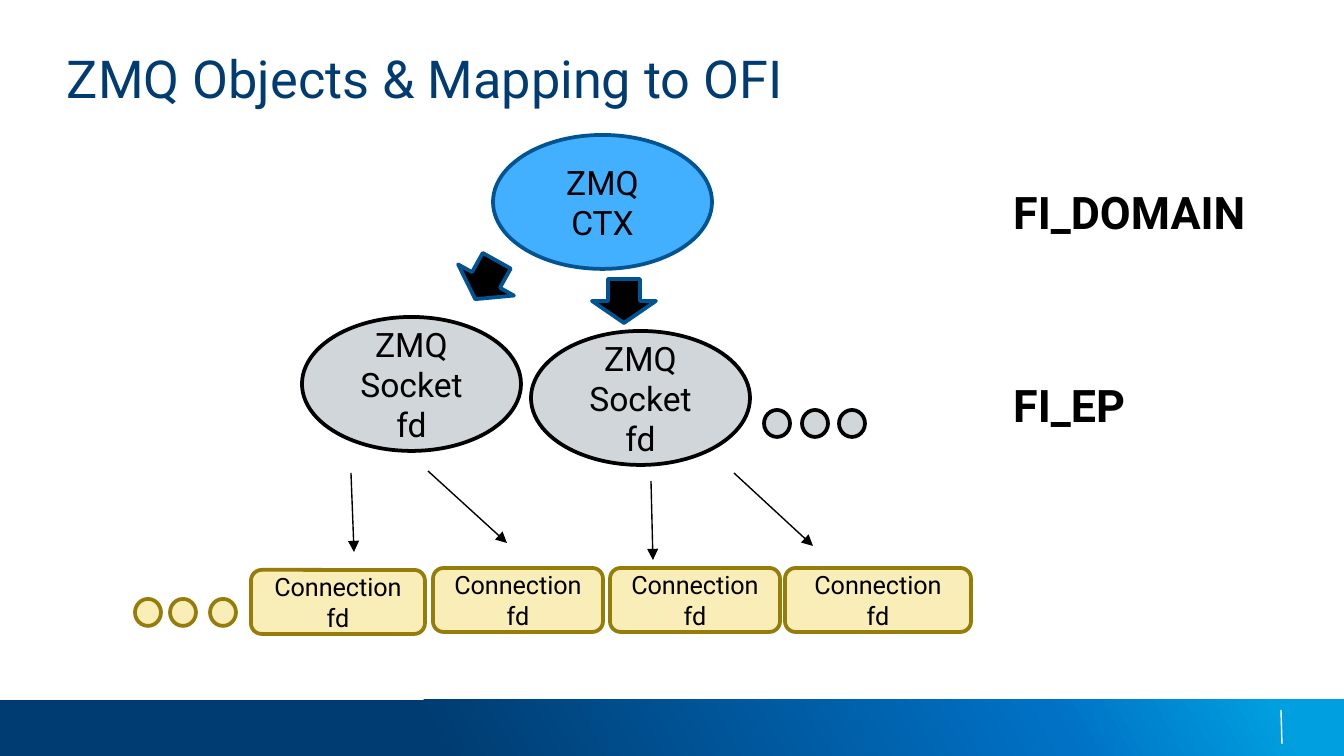
import copy
import pptx
import pptx.util
import pptx.dml.color
import pptx.enum.shapes
import pptx.enum.text
import pptx.oxml
import pptx.oxml.ns

KIND = pptx.enum.shapes.MSO_SHAPE
ALIGN = pptx.enum.text.PP_ALIGN
ANCHOR = pptx.enum.text.MSO_ANCHOR
SCALE = 914400 / 134.4
FONT = "Roboto"
BLACK, WHITE, NAVY = "000000", "FFFFFF", "003C71"
BLUE, EDGE = "43AFFF", "005492"
GREY, SAND, OLIVE = "D0D6D9", "FAEEB8", "967D0A"


def px(num):
    return pptx.util.Emu(round(num * SCALE))


def tint(code):
    return pptx.dml.color.RGBColor.from_string(code)


def style(item, form):
    for key, value in form.items():
        setattr(item, key, value)


def write(frame, lines, size, color=BLACK, bold=False, align=ALIGN.LEFT):
    """Fill a text frame, one paragraph for each line."""
    for num, line in enumerate(lines):
        para = frame.add_paragraph() if num else frame.paragraphs[0]
        para.alignment = align
        run = para.add_run()
        run.text = line
        style(run.font, {"name": FONT, "size": pptx.util.Pt(size), "bold": bold})
        run.font.color.rgb = tint(color)


def node(slide, kind, box, fill, edge, lines=(), size=18, turn=0):
    """Add a filled, outlined shape with centred text."""
    shape = slide.shapes.add_shape(kind, *map(px, box))
    shape.shadow.inherit = False
    shape.rotation = turn
    shape.fill.solid()
    shape.fill.fore_color.rgb = tint(fill)
    shape.line.color.rgb = tint(edge)
    shape.line.width = pptx.util.Pt(2)
    style(shape.text_frame, {"word_wrap": True, "vertical_anchor": ANCHOR.MIDDLE})
    write(shape.text_frame, lines, size, align=ALIGN.CENTER)


def link(slide, ends, color=BLACK, head=True):
    """Add a thin line, with an arrowhead if wanted."""
    line = slide.shapes.add_connector(
        pptx.enum.shapes.MSO_CONNECTOR.STRAIGHT, *map(px, ends))
    line.line.color.rgb = tint(color)
    line.line.width = pptx.util.Pt(0.75)
    if head:
        tail = pptx.oxml.parse_xml(
            "<a:tailEnd %s type='triangle'/>" % pptx.oxml.ns.nsdecls("a"))
        line.line._get_or_add_ln().append(tail)
    line._element.spPr.append(
        pptx.oxml.parse_xml("<a:effectLst %s/>" % pptx.oxml.ns.nsdecls("a")))


def dots(slide, lefts, top, fill, edge):
    for left in lefts:
        node(slide, KIND.OVAL, (left, top, 26, 27), fill, edge)


def label(slide, top, text):
    box = slide.shapes.add_textbox(*map(px, (1000, top, 308, 67)))
    box.text_frame.word_wrap = True
    write(box.text_frame, [text], 24, bold=True)


def footer(slide):
    """Add the gradient band and its short white rule."""
    band = slide.shapes.add_shape(KIND.RECTANGLE, *map(px, (0, 700, 1344, 56)))
    band.shadow.inherit = False
    band.line.fill.background()
    band.fill.gradient()
    band.fill.gradient_angle = 29
    stops = band._element.spPr.find(".//" + pptx.oxml.ns.qn("a:gsLst"))
    stops.append(copy.deepcopy(stops[0]))
    parts = ((0.32, NAVY), (0.78, "0071C5"), (0.95, "009FDF"))
    for stop, (place, color) in zip(band.fill.gradient_stops, parts):
        stop.position = place
        stop.color.rgb = tint(color)
    link(slide, (1281, 710, 1282, 744), WHITE, head=False)


def heading(slide, text):
    title = slide.shapes.title
    style(title, dict(zip(("left", "top", "width", "height"),
                          map(px, (67, 46, 1210, 128)))))
    frame = title.text_frame
    style(frame, {"margin_left": 0, "margin_top": 0, "margin_right": 0,
                  "margin_bottom": 0, "word_wrap": True,
                  "vertical_anchor": ANCHOR.TOP})
    write(frame, [text], 28, NAVY)


def main():
    deck = pptx.Presentation()
    style(deck, {"slide_width": px(1344), "slide_height": px(756)})
    slide = deck.slides.add_slide(deck.slide_layouts[5])
    footer(slide)
    heading(slide, "ZMQ Objects & Mapping to OFI")

    # Context and its block arrows
    node(slide, KIND.OVAL, (493, 135, 219, 134), BLUE, EDGE, ["ZMQ CTX"])
    for left, top, turn in ((592, 279, 0), (454, 258, 29.2)):
        node(slide, KIND.DOWN_ARROW, (left, top, 64, 44), BLACK, EDGE, turn=turn)

    # Sockets
    for left, top in ((302, 317), (531, 331)):
        node(slide, KIND.OVAL, (left, top, 219, 134), GREY, BLACK,
             ["ZMQ", "Socket fd"])
    dots(slide, (764, 802, 839), 410, GREY, BLACK)

    # Connections
    for ends in ((351, 473, 354, 552), (428, 471, 507, 543),
                 (651, 481, 653, 560), (734, 473, 813, 546)):
        link(slide, ends)
    for left, top, width in ((251, 570, 174), (433, 568, 170),
                             (610, 568, 170), (785, 568, 186)):
        node(slide, KIND.ROUNDED_RECTANGLE, (left, top, width, 64), SAND, OLIVE,
             ["Connection fd"], 13.5)
    dots(slide, (135, 170, 210), 599, SAND, OLIVE)

    # Matching OFI objects
    label(slide, 178, "FI_DOMAIN")
    label(slide, 371, "FI_EP")
    deck.save("out.pptx")


if __name__ == "__main__":
    main()
